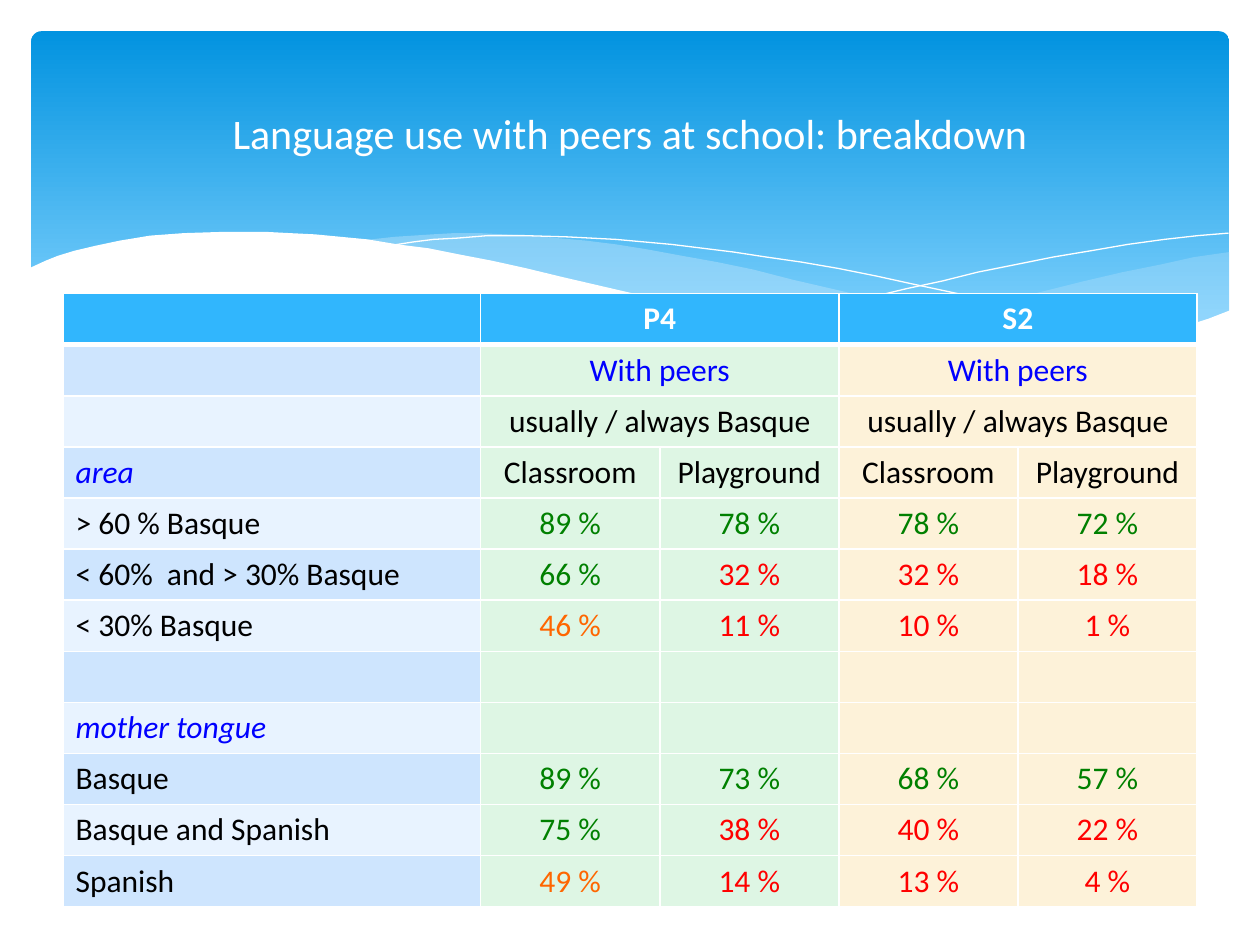
import pptx
import pptx.util
import pptx.dml.color
import pptx.enum.shapes
import pptx.enum.text
import pptx.oxml
import pptx.oxml.ns

Cm, Pt = pptx.util.Cm, pptx.util.Pt
ALIGN = pptx.enum.text.PP_ALIGN
ANCHOR = pptx.enum.text.MSO_ANCHOR
INCH = 2.54  # cm; the wave outlines below are in inches

COLORS = {
    "white": "FFFFFF", "black": "000000", "blue": "0000FF",
    "high": "008000", "middle": "FF6600", "low": "FF0000",
    "sky_top": "0293E0", "sky_bottom": "83D3FE", "wave": "C6E7FC",
    "header": "31B6FD", "band_dark": "CEE5FE", "band_light": "E8F3FF",
    "p4": "DEF6E4", "s2": "FDF2D9",
}

RIGHT_WAVE = [
    (9.76, 2), (9.48, 2.04), (9.21, 2.1), (8.91, 2.16), (8.61, 2.23),
    (8.05, 2.37), (7.53, 2.48), (7.06, 2.57), (6.61, 2.65), (6.91, 2.69),
    (7.19, 2.72), (7.45, 2.75), (7.69, 2.77), (8.03, 2.78), (8.35, 2.77),
    (8.63, 2.75), (8.89, 2.72), (9.13, 2.67), (9.35, 2.62), (9.49, 2.57),
    (9.76, 2.47)]
MIDDLE_WAVE = [
    (8.93, 2.73), (8.66, 2.69), (8.37, 2.65), (8.07, 2.6), (7.75, 2.54),
    (7.41, 2.47), (7.06, 2.4), (6.68, 2.31), (6.29, 2.22), (5.98, 2.14),
    (5.69, 2.08), (5.41, 2.03), (5.14, 1.98), (4.89, 1.94), (4.65, 1.91),
    (4.42, 1.89), (4.2, 1.87), (3.99, 1.86), (3.8, 1.85), (3.61, 1.85),
    (3.44, 1.86), (3.13, 1.88), (2.86, 1.91), (3.23, 1.96), (3.62, 2.03),
    (4.04, 2.11), (4.49, 2.22), (4.91, 2.32), (5.3, 2.4), (5.66, 2.48),
    (6.01, 2.55), (6.34, 2.61), (6.65, 2.66), (6.95, 2.7), (7.22, 2.74),
    (7.48, 2.76), (7.73, 2.77), (7.96, 2.78), (8.28, 2.78), (8.57, 2.77),
    (8.76, 2.75)]
LONG_LINE = [
    (3.09, 1.95), (3.28, 1.92), (3.44, 1.9), (3.63, 1.89), (3.87, 1.87),
    (4.16, 1.87), (4.5, 1.88), (4.89, 1.9), (5.33, 1.94), (5.82, 2),
    (6.08, 2.04), (6.36, 2.08), (6.65, 2.13), (6.95, 2.19), (7.27, 2.26),
    (7.6, 2.33), (7.95, 2.41), (8.31, 2.51), (8.69, 2.61), (9.07, 2.72)]
SHORT_LINE = [
    (6.13, 2.57), (6.53, 2.46), (6.95, 2.35), (7.2, 2.29), (7.48, 2.23),
    (7.76, 2.16), (8.06, 2.1), (8.36, 2.04), (8.66, 1.99), (8.95, 1.94),
    (9.24, 1.9), (9.51, 1.87), (9.75, 1.85)]
WHITE_WAVE = [
    (9.77, 2.46), (9.59, 2.53), (9.4, 2.59), (9.2, 2.65), (8.99, 2.69),
    (8.75, 2.73), (8.5, 2.75), (8.23, 2.77), (7.93, 2.76), (7.61, 2.75),
    (7.26, 2.72), (6.88, 2.68), (6.48, 2.62), (6.03, 2.54), (5.55, 2.45),
    (5.03, 2.33), (4.47, 2.2), (4.18, 2.13), (3.91, 2.07), (3.65, 2.02),
    (3.4, 1.97), (3.16, 1.94), (2.92, 1.9), (2.71, 1.88), (2.5, 1.86),
    (2.3, 1.85), (2.11, 1.84), (1.77, 1.84), (1.46, 1.85), (1.19, 1.87),
    (0.95, 1.91), (0.76, 1.95), (0.59, 1.99), (0.46, 2.03), (0.36, 2.07),
    (0.23, 2.13), (0.23, 3.29), (9.77, 3.29)]

# Label, then either two group headings, four column values, or nothing
ROWS = [
    ("", "P4", "S2"),
    ("", "With peers", "With peers"),
    ("", "usually / always Basque", "usually / always Basque"),
    ("area",) + ("Classroom", "Playground") * 2,
    ("> 60 % Basque", 89, 78, 78, 72),
    ("< 60%  and > 30% Basque", 66, 32, 32, 18),
    ("< 30% Basque", 46, 11, 10, 1),
    ("",),
    ("mother tongue",),
    ("Basque", 89, 73, 68, 57),
    ("Basque and Spanish", 75, 38, 40, 22),
    ("Spanish", 49, 14, 13, 4),
]


def rgb(name):
    return pptx.dml.color.RGBColor.from_string(COLORS[name])


def write(tf, text, size=18, color="black", bold=False, italic=False, align=ALIGN.CENTER):
    p = tf.paragraphs[0]
    p.alignment = align
    r = p.add_run()
    r.text = text
    f = r.font
    f.name, f.size, f.bold, f.italic = "Calibri", Pt(size), bold, italic
    f.color.rgb = rgb(color)


def add_banner(s):
    sp = s.shapes.add_shape(pptx.enum.shapes.MSO_SHAPE.ROUNDED_RECTANGLE,
                            Cm(0.63), Cm(0.63), Cm(24.15), Cm(6.86))
    sp.adjustments[0] = 0.03
    sp.shadow.inherit = False
    sp.line.fill.background()
    sp.fill.gradient()
    sp.fill.gradient_angle = 270
    for stop, color, position in zip(sp.fill.gradient_stops, ("sky_top", "sky_bottom"), (0, 0.9)):
        stop.color.rgb = rgb(color)
        stop.position = position


def add_curve(s, points, fill=None, alpha=100):
    """Filled wave, or a white hairline when there is no fill."""
    xy = [(Cm(x * INCH), Cm(y * INCH)) for x, y in points]
    builder = s.shapes.build_freeform(*xy[0])
    builder.add_line_segments(xy[1:], close=fill is not None)
    sp = builder.convert_to_shape()
    sp.shadow.inherit = False
    if fill is None:
        sp.fill.background()
        sp.line.color.rgb = rgb("white")
        sp.line.width = 0
        return
    sp.line.fill.background()
    sp.fill.solid()
    sp.fill.fore_color.rgb = rgb(fill)
    if alpha < 100:
        clr = sp.fill._xPr.find(".//" + pptx.oxml.ns.qn("a:srgbClr"))
        clr.append(pptx.oxml.parse_xml(
            f'<a:alpha {pptx.oxml.ns.nsdecls("a")} val="{alpha * 1000}"/>'))


def style_cell(cell, fill, top=1, bottom=1):
    tcPr = cell._tc.get_or_add_tcPr()
    for side, width in zip("LRTB", (1, 1, top, bottom)):
        tcPr.append(pptx.oxml.parse_xml(
            f'<a:ln{side} {pptx.oxml.ns.nsdecls("a")} w="{Pt(width)}"><a:solidFill>'
            f'<a:srgbClr val="{COLORS["white"]}"/></a:solidFill></a:ln{side}>'))
    cell.fill.solid()
    cell.fill.fore_color.rgb = rgb(fill)


def value_color(value):
    return "high" if value >= 50 else "middle" if value > 40 else "low"


def add_breakdown_table(s):
    table = s.shapes.add_table(len(ROWS), 5, Cm(1.27), Cm(5.92),
                               Cm(22.86), Cm(1.03 * len(ROWS))).table
    for c, width in enumerate((8.42, 3.61, 3.61, 3.61, 3.61)):
        table.columns[c].width = Cm(width)
    for i, (label, *values) in enumerate(ROWS):
        table.rows[i].height = Cm(1.03)
        band = "band_dark" if i % 2 else "band_light"
        for c, fill in enumerate((band, "p4", "p4", "s2", "s2")):
            style_cell(table.cell(i, c), fill if i else "header",
                       top=3 if i == 1 else 1, bottom=1 if i else 3)
        if label:
            section = label in ("area", "mother tongue")
            write(table.cell(i, 0).text_frame, label, italic=section,
                  color="blue" if section else "black", align=ALIGN.LEFT)
        span = 2 if len(values) == 2 else 1
        for k, value in enumerate(values):
            cell = table.cell(i, 1 + k * span)
            if span == 2:
                cell.merge(table.cell(i, 2 + k * span))
            if isinstance(value, int):
                write(cell.text_frame, f"{value} %", color=value_color(value))
            else:
                color = {0: "white", 1: "blue"}.get(i, "black")
                write(cell.text_frame, value, color=color, bold=i == 0)


def add_title(s, text):
    tf = s.shapes.add_textbox(Cm(1.27), Cm(0.94), Cm(22.86), Cm(3.48)).text_frame
    tf.word_wrap = True
    tf.vertical_anchor = ANCHOR.MIDDLE
    write(tf, text, size=24, color="white")


def main():
    prs = pptx.Presentation()
    prs.slide_width, prs.slide_height = Cm(25.4), Cm(19.05)
    s = prs.slides.add_slide(prs.slide_layouts[6])

    # Banner with waves
    add_banner(s)
    add_curve(s, RIGHT_WAVE, "wave", alpha=29)
    add_curve(s, MIDDLE_WAVE, "wave", alpha=40)
    add_curve(s, LONG_LINE)
    add_curve(s, SHORT_LINE)
    add_curve(s, WHITE_WAVE, "white")

    # Content
    add_breakdown_table(s)
    add_title(s, "Language use with peers at school: breakdown")
    prs.save("out.pptx")


if __name__ == "__main__":
    main()
